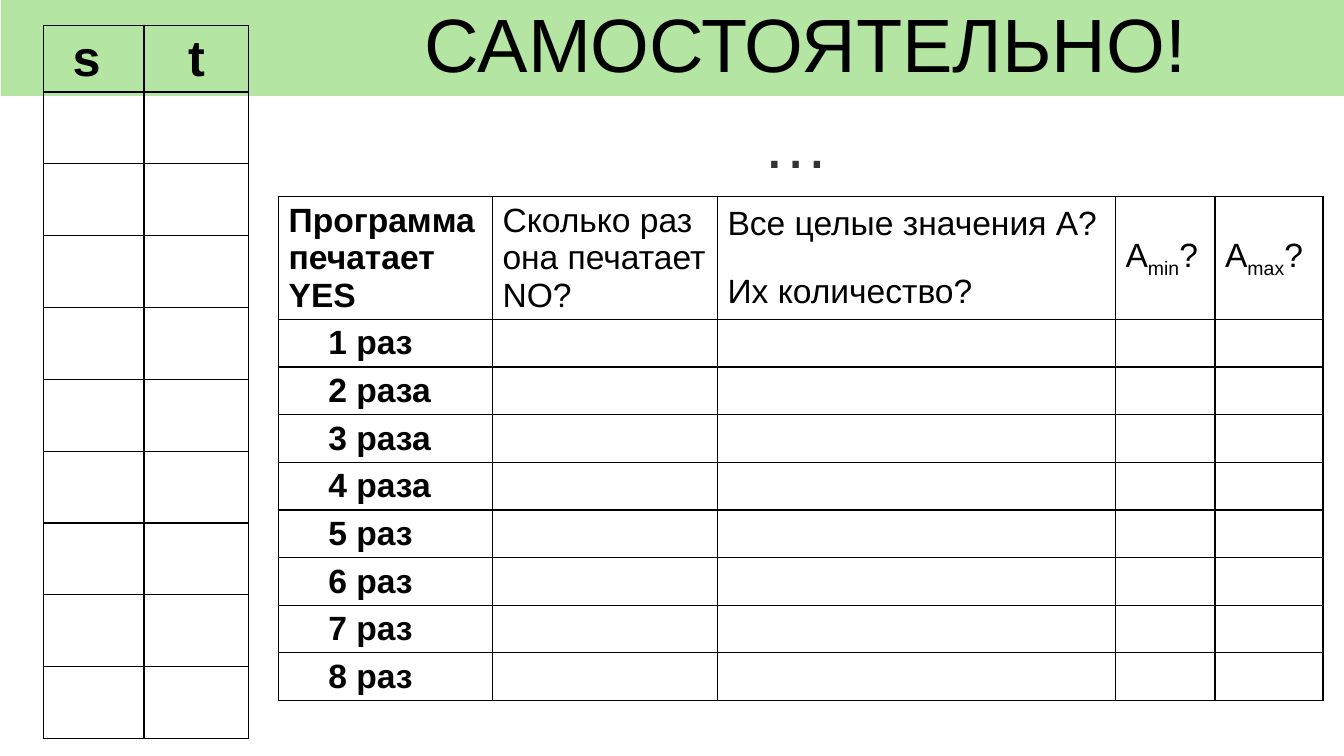
import pptx
import pptx.dml.color
import pptx.enum.text
import pptx.oxml
import pptx.oxml.ns
import pptx.util
from pptx.util import Cm

BLACK = pptx.dml.color.RGBColor(0x00, 0x00, 0x00)
GREY = pptx.dml.color.RGBColor(0x33, 0x33, 0x33)
GREEN = pptx.dml.color.RGBColor(0xB4, 0xE5, 0xA2)
CENTER = pptx.enum.text.PP_ALIGN.CENTER
LEFT = pptx.enum.text.PP_ALIGN.LEFT
MIDDLE = pptx.enum.text.MSO_ANCHOR.MIDDLE


def add_text(tf, text, size=24, bold=False, color=BLACK, align=LEFT, indent=0, subscript=None):
    """Write one paragraph; the subscript part of the text is lowered."""
    p = tf.paragraphs[0]
    p.alignment = align
    if indent:
        pPr = p._p.get_or_add_pPr()
        pPr.set("marL", str(Cm(indent)))
        pPr.set("indent", "0")
    for part in text.partition(subscript) if subscript else [text]:
        for i, line in enumerate(part.split("\n")):
            if i:
                p.add_line_break()
            r = p.add_run()
            r.text = line
            r.font.name = "Arial"
            r.font.size = pptx.util.Pt(size)
            r.font.bold = bold
            r.font.color.rgb = color
            if part == subscript:
                r.font._element.set("baseline", "-25000")
    return p


def add_grid(left, top, widths, heights):
    """Add an unfilled table with thin black borders."""
    frame = slide.shapes.add_table(len(heights), len(widths), Cm(left), Cm(top),
                                   Cm(sum(widths)), Cm(sum(heights)))
    table = frame.table
    table.first_row = table.horz_banding = False
    for column, width in zip(table.columns, widths):
        column.width = Cm(width)
    for row, height in zip(table.rows, heights):
        row.height = Cm(height)
    for cell in table.iter_cells():
        cell.vertical_anchor = MIDDLE
        tcPr = cell._tc.get_or_add_tcPr()
        for side in ("lnL", "lnR", "lnT", "lnB"):
            tcPr.append(pptx.oxml.parse_xml(
                f'<a:{side} {pptx.oxml.ns.nsdecls("a")} w="12700"><a:solidFill>'
                f'<a:srgbClr val="{BLACK}"/></a:solidFill></a:{side}>'))
        cell.fill.background()
    return table


prs = pptx.Presentation()
prs.slide_width, prs.slide_height = Cm(33.87), Cm(19.05)
slide = prs.slides.add_slide(prs.slide_layouts[5])

# Title band
title = slide.shapes.title
title.left, title.top, title.width, title.height = Cm(0.02), Cm(0), Cm(33.87), Cm(2.42)
title.fill.solid()
title.fill.fore_color.rgb = GREEN
tf = title.text_frame
tf.auto_size = pptx.enum.text.MSO_AUTO_SIZE.NONE
tf.vertical_anchor = MIDDLE
p = add_text(tf, "САМОСТОЯТЕЛЬНО!", size=54, align=CENTER, indent=6.7)
p.line_spacing = 0.9

# Table of s and t values
values = add_grid(1.09, 0.64, [2.54, 2.64], [1.68] + [1.81] * 9)
for col, name in enumerate(["s ", "t"]):
    add_text(values.cell(0, col).text_frame, name, size=36, bold=True, align=CENTER)

# Table of questions
questions = add_grid(7.02, 4.96, [5.39, 5.67, 10.03, 2.51, 2.72], [3.09] + [1.2] * 8)
headers = [
    ("Программа печатает\nYES", dict(bold=True)),
    ("Сколько раз она печатает NO?", {}),
    ("Все целые значения А? \nИх количество?", {}),
    ("Аmin?", dict(subscript="min")),
    ("Аmax?", dict(subscript="max")),
]
for col, (text, style) in enumerate(headers):
    add_text(questions.cell(0, col).text_frame, text, **style)
for n in range(1, 9):
    word = "раза" if n in (2, 3, 4) else "раз"
    add_text(questions.cell(n, 0).text_frame, f"{n} {word}", bold=True, indent=1)

# Ellipsis above the questions
box = slide.shapes.add_textbox(Cm(11.58), Cm(2.42), Cm(16.99), Cm(2.31))
tf = box.text_frame
tf.word_wrap = True
tf.auto_size = pptx.enum.text.MSO_AUTO_SIZE.SHAPE_TO_FIT_TEXT
tf.vertical_anchor = MIDDLE
p = add_text(tf, "…", size=48, color=GREY, align=CENTER)
p.space_after = pptx.util.Pt(12)

prs.save("out.pptx")
